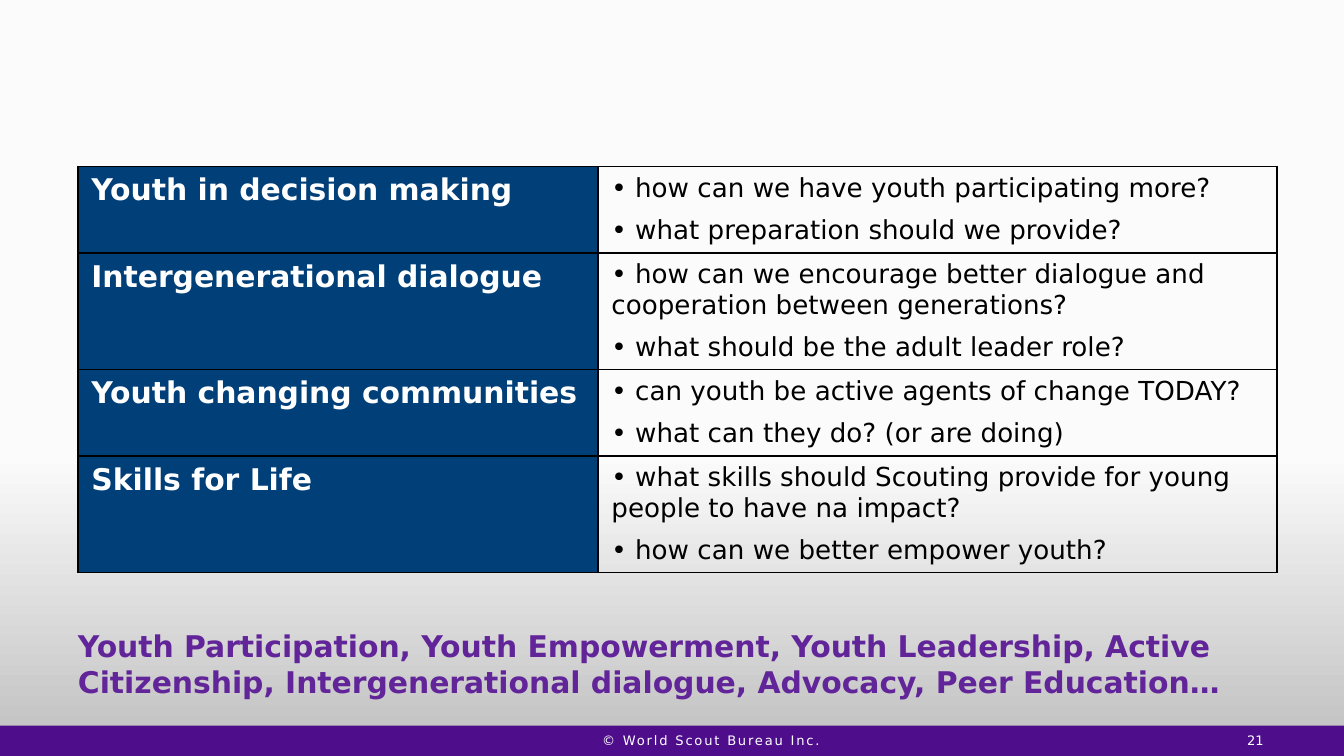
from lxml.etree import SubElement
from pptx import Presentation
from pptx.dml.color import RGBColor
from pptx.enum.shapes import MSO_SHAPE
from pptx.enum.text import MSO_ANCHOR, PP_ALIGN
from pptx.oxml.ns import qn
from pptx.util import Inches, Pt

FONT = "DejaVu Sans"
TOPICS = [
    ("Youth in decision making", 0.64,
     ["how can we have youth participating more?",
      "what preparation should we provide?"]),
    ("Intergenerational dialogue", 0.87,
     ["how can we encourage better dialogue and cooperation between generations?",
      "what should be the adult leader role?"]),
    ("Youth changing communities", 0.64,
     ["can youth be active agents of change TODAY?",
      "what can they do? (or are doing)"]),
    ("Skills for Life", 0.87,
     ["what skills should Scouting provide for young people to have na impact?",
      "how can we better empower youth?"]),
]
KEYWORDS = ("Youth Participation, Youth Empowerment, Youth Leadership, Active "
            "Citizenship, Intergenerational dialogue, Advocacy, Peer Education…")
COLUMN_WIDTHS = (3.87, 5.05)
LEFT, TABLE_TOP = 0.58, 1.24
SLIDE_WIDTH = Inches(10)
SLIDE_HEIGHT = SLIDE_WIDTH * 9 // 16
BAND_TOP = Inches(5.4)
BACKGROUND_STOPS = [(0.6, "FBFBFB"), (1, "BFBFBF")]


def rgb(value):
    """Turn a hex string into a colour."""
    return RGBColor.from_string(value)


def add_run(paragraph, text, size, color, bold=False):
    """Add one formatted run to a paragraph."""
    run = paragraph.add_run()
    run.text = text
    run.font.name, run.font.size, run.font.bold = FONT, Pt(size), bold
    run.font.color.rgb = rgb(color)
    return run


def add_text(slide, box, text, size, color, bold=False, align=PP_ALIGN.LEFT,
             anchor=MSO_ANCHOR.TOP, side_inset=0):
    """Add a wrapped one-paragraph text box and return its run."""
    frame = slide.shapes.add_textbox(*map(Inches, box)).text_frame
    frame.word_wrap = True
    frame.vertical_anchor = anchor
    frame.margin_left = frame.margin_right = Inches(side_inset)
    paragraph = frame.paragraphs[0]
    paragraph.alignment = align
    return add_run(paragraph, text, size, color, bold)


def add_borders(cell):
    """Draw a thin black line on every side of a cell."""
    properties = cell._tc.get_or_add_tcPr()
    for side in ("a:lnL", "a:lnR", "a:lnT", "a:lnB"):
        line = SubElement(properties, qn(side), w=str(Pt(1)))
        SubElement(SubElement(line, qn("a:solidFill")), qn("a:srgbClr"), val="000000")


def add_questions(cell, questions):
    """Fill a cell with bulleted questions."""
    frame = cell.text_frame
    for index, question in enumerate(questions):
        paragraph = frame.add_paragraph() if index else frame.paragraphs[0]
        properties = paragraph._p.get_or_add_pPr()
        SubElement(properties, qn("a:buFont"), typeface=FONT)
        SubElement(properties, qn("a:buChar"), char="•")
        paragraph.space_after = Pt(6)
        add_run(paragraph, " " + question, 14, "000000")


def add_topics(slide):
    """Add the table of topics and questions."""
    size = sum(COLUMN_WIDTHS), sum(height for _, height, _ in TOPICS)
    table = slide.shapes.add_table(
        len(TOPICS), 2, *map(Inches, (LEFT, TABLE_TOP, *size))).table
    table.first_row = table.horz_banding = False
    for column, width in zip(table.columns, COLUMN_WIDTHS):
        column.width = Inches(width)
    for row, (topic, height, questions) in zip(table.rows, TOPICS):
        row.height = Inches(height)
        topic_cell, question_cell = row.cells
        add_borders(topic_cell)
        add_borders(question_cell)
        topic_cell.fill.solid()
        topic_cell.fill.fore_color.rgb = rgb("003F78")
        question_cell.fill.background()
        add_run(topic_cell.text_frame.paragraphs[0], topic, 16, "FFFFFF", True)
        add_questions(question_cell, questions)


def add_footer(slide):
    """Add the footer band, copyright line and slide number."""
    band = slide.shapes.add_shape(
        MSO_SHAPE.RECTANGLE, 0, BAND_TOP, SLIDE_WIDTH, SLIDE_HEIGHT - BAND_TOP)
    band.shadow.inherit = False
    band.fill.solid()
    band.fill.fore_color.rgb = rgb("4E0E8C")
    band.line.fill.background()
    copyright_run = add_text(
        slide, (4.25, 5.39, 2.08, 0.23), "© World Scout Bureau Inc.", 7, "FFFFFF",
        align=PP_ALIGN.CENTER, anchor=MSO_ANCHOR.MIDDLE)
    copyright_run.font._element.set("spc", "100")
    add_text(slide, (7.17, 5.39, 2.33, 0.23), "21", 7, "FFFFFF",
             align=PP_ALIGN.RIGHT, anchor=MSO_ANCHOR.MIDDLE, side_inset=0.1)


def main():
    """Build and save the slide."""
    deck = Presentation()
    deck.slide_width, deck.slide_height = SLIDE_WIDTH, SLIDE_HEIGHT
    slide = deck.slides.add_slide(deck.slide_layouts[6])
    backdrop = slide.background.fill
    backdrop.gradient()
    backdrop.gradient_angle = 270
    for stop, (position, color) in zip(backdrop.gradient_stops, BACKGROUND_STOPS):
        stop.position = position
        stop.color.rgb = rgb(color)
    add_topics(slide)
    add_footer(slide)
    add_text(slide, (LEFT, 4.62, sum(COLUMN_WIDTHS), 0.77), KEYWORDS, 16, "622599", True)
    deck.save("out.pptx")


if __name__ == "__main__":
    main()
